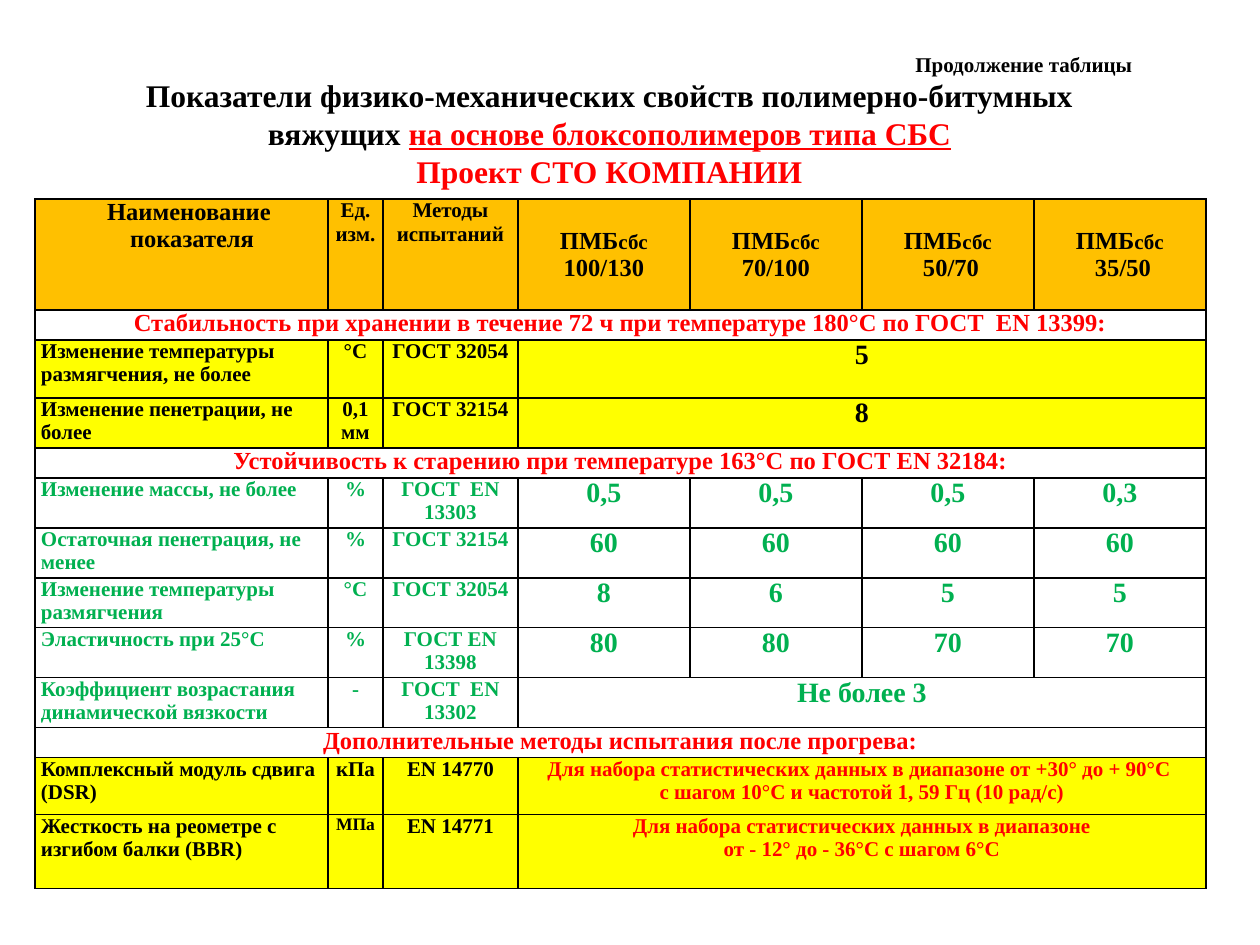
from lxml.etree import SubElement
from pptx import Presentation
from pptx.dml.color import RGBColor
from pptx.enum.text import MSO_ANCHOR, MSO_AUTO_SIZE, PP_ALIGN
from pptx.oxml.ns import qn
from pptx.util import Emu, Pt

FONT = "Times New Roman"
BLACK = RGBColor(0x00, 0x00, 0x00)
RED = RGBColor(0xFF, 0x00, 0x00)
GREEN = RGBColor(0x00, 0xB0, 0x50)
ORANGE = RGBColor(0xFF, 0xC0, 0x00)
YELLOW = RGBColor(0xFF, 0xFF, 0x00)

CONTINUATION = "Продолжение таблицы"
SUBJECT = "Показатели физико-механических свойств полимерно-битумных вяжущих "
POLYMER = "на основе блоксополимеров типа СБС"
DRAFT = "Проект СТО КОМПАНИИ"

HEADINGS = [(["Наименование", " показателя"], 14), (["Ед. изм."], 12), (["Методы испытаний"], 12)]
# Grade and whether it starts a paragraph of its own
GRADES = [(" 100/130", False), (" 70/100", False), (" 50/70", True), (" 35/50", True)]

# Section title, text colour, fill, rows of (indicator, unit, method, values)
SECTIONS = [
    ("Стабильность при хранении в течение 72 ч при температуре 180°С по ГОСТ  EN 13399:",
     BLACK, YELLOW, [
         ("Изменение температуры размягчения, не более", "°С", "ГОСТ 32054", ["5"]),
         ("Изменение пенетрации, не более", "0,1 мм", "ГОСТ 32154", ["8"]),
     ]),
    ("Устойчивость к старению при температуре 163°С по ГОСТ EN 32184:",
     GREEN, None, [
         ("Изменение массы, не более", "%", "ГОСТ  EN 13303", ["0,5", "0,5", "0,5", "0,3"]),
         ("Остаточная пенетрация, не менее", "%", "ГОСТ 32154", ["60", "60", "60", "60"]),
         ("Изменение температуры размягчения", "°С", "ГОСТ 32054", ["8", "6", "5", "5"]),
         ("Эластичность при 25°С", "%", "ГОСТ EN 13398", ["80", "80", "70", "70"]),
         ("Коэффициент возрастания динамической вязкости", "-", "ГОСТ  EN 13302",
          ["Не более 3"]),
     ]),
    ("Дополнительные методы испытания после прогрева:",
     BLACK, YELLOW, [
         ("Комплексный модуль сдвига (DSR)", "кПа", "EN 14770",
          [["Для набора статистических данных в диапазоне от +30° до + 90°С ",
            "с шагом 10°С и частотой 1, 59 Гц (10 рад/с)"]]),
         ("Жесткость на реометре с изгибом балки (BBR)", "МПа", "EN 14771",
          [["Для набора статистических данных в диапазоне",
            " от - 12° до - 36°С с шагом 6°С "]]),
     ]),
]
SMALL_UNITS = {"МПа": 10}

COLUMN_WIDTHS = [293, 55, 135] + [172] * 4
ROW_HEIGHTS = [111, 30, 58, 50, 30] + [50] * 5 + [30, 57, 74]
LAST_COLUMN = len(COLUMN_WIDTHS) - 1


def px(length):
    return Emu(round(length * 914400 / 126))


def write(frame, paragraphs, align=PP_ALIGN.CENTER):
    """Fill the frame with paragraphs, each a list of (text, size, colour) runs."""
    for index, runs in enumerate(paragraphs):
        paragraph = frame.add_paragraph() if index else frame.paragraphs[0]
        paragraph.alignment = align
        paragraph.line_spacing = 1.0
        paragraph.space_before = paragraph.space_after = Pt(0)
        for text, size, colour in runs:
            run = paragraph.add_run()
            run.text = text
            run.font.name = FONT
            run.font.size = Pt(size)
            run.font.bold = True
            run.font.color.rgb = colour


def style_cell(cell, fill):
    cell.margin_left = cell.margin_right = px(6)
    cell.margin_top = cell.margin_bottom = 0
    properties = cell._tc.get_or_add_tcPr()
    for side in ("a:lnL", "a:lnR", "a:lnT", "a:lnB"):
        border = SubElement(properties, qn(side), w=str(Pt(1)))
        SubElement(SubElement(border, qn("a:solidFill")), qn("a:srgbClr"), val=str(BLACK))
    if fill is None:
        cell.fill.background()
    else:
        cell.fill.solid()
        cell.fill.fore_color.rgb = fill


def add_title(slide):
    title = slide.shapes.title
    title.left, title.top, title.width, title.height = px(74), px(45), px(1071), px(152)
    frame = title.text_frame
    frame.word_wrap = True
    frame.auto_size = MSO_AUTO_SIZE.NONE
    frame.vertical_anchor = MSO_ANCHOR.TOP
    write(frame, [
        [(CONTINUATION, 12, BLACK)],
        [(SUBJECT, 18, BLACK), (POLYMER, 18, RED)],
        [(DRAFT, 18, RED)],
    ])
    frame.paragraphs[0].alignment = PP_ALIGN.RIGHT
    frame.paragraphs[1].runs[1].font.underline = True


def fill_header(table):
    for column, (lines, size) in enumerate(HEADINGS):
        write(table.cell(0, column).text_frame, [[(line, size, BLACK)] for line in lines])
    for paragraph in table.cell(0, 0).text_frame.paragraphs:
        paragraph._p.get_or_add_pPr().set("marL", str(px(15)))
    for column, (grade, own_paragraph) in enumerate(GRADES, len(HEADINGS)):
        binder = [("ПМБ", 14, BLACK), ("сбс", 12, BLACK)]
        grade_run = [(grade, 14, BLACK)]
        cell = table.cell(0, column)
        cell.vertical_anchor = MSO_ANCHOR.MIDDLE
        write(cell.text_frame, [binder, grade_run] if own_paragraph else [binder + grade_run])


def fill_indicator(table, row, indicator, colour):
    name, unit, method, values = indicator
    write(table.cell(row, 0).text_frame, [[(name, 12, colour)]], PP_ALIGN.LEFT)
    write(table.cell(row, 1).text_frame, [[(unit, SMALL_UNITS.get(unit, 12), colour)]])
    write(table.cell(row, 2).text_frame, [[(method, 12, colour)]])
    if len(values) == 1:
        table.cell(row, 3).merge(table.cell(row, LAST_COLUMN))
    for column, value in enumerate(values, 3):
        if isinstance(value, list):
            paragraphs = [[(line, 12, RED)] for line in value]
        else:
            paragraphs = [[(value, 16, colour)]]
        write(table.cell(row, column).text_frame, paragraphs)


def add_indicator_table(slide):
    table = slide.shapes.add_table(
        len(ROW_HEIGHTS), len(COLUMN_WIDTHS), px(35), px(199),
        px(sum(COLUMN_WIDTHS)), px(sum(ROW_HEIGHTS))).table
    table.first_row = table.horz_banding = False
    for column, width in zip(table.columns, COLUMN_WIDTHS):
        column.width = px(width)
    for row, height in zip(table.rows, ROW_HEIGHTS):
        row.height = px(height)

    fill_header(table)
    fills = [ORANGE]
    for heading, colour, fill, indicators in SECTIONS:
        row = len(fills)
        table.cell(row, 0).merge(table.cell(row, LAST_COLUMN))
        write(table.cell(row, 0).text_frame, [[(heading, 14, RED)]])
        fills.append(None)
        for indicator in indicators:
            fill_indicator(table, len(fills), indicator, colour)
            fills.append(fill)

    for row, fill in zip(table.rows, fills):
        for cell in row.cells:
            style_cell(cell, fill)


def main():
    presentation = Presentation()
    presentation.slide_width, presentation.slide_height = px(1260), px(945)
    slide = presentation.slides.add_slide(presentation.slide_layouts[5])
    add_title(slide)
    add_indicator_table(slide)
    presentation.save("out.pptx")


if __name__ == "__main__":
    main()
